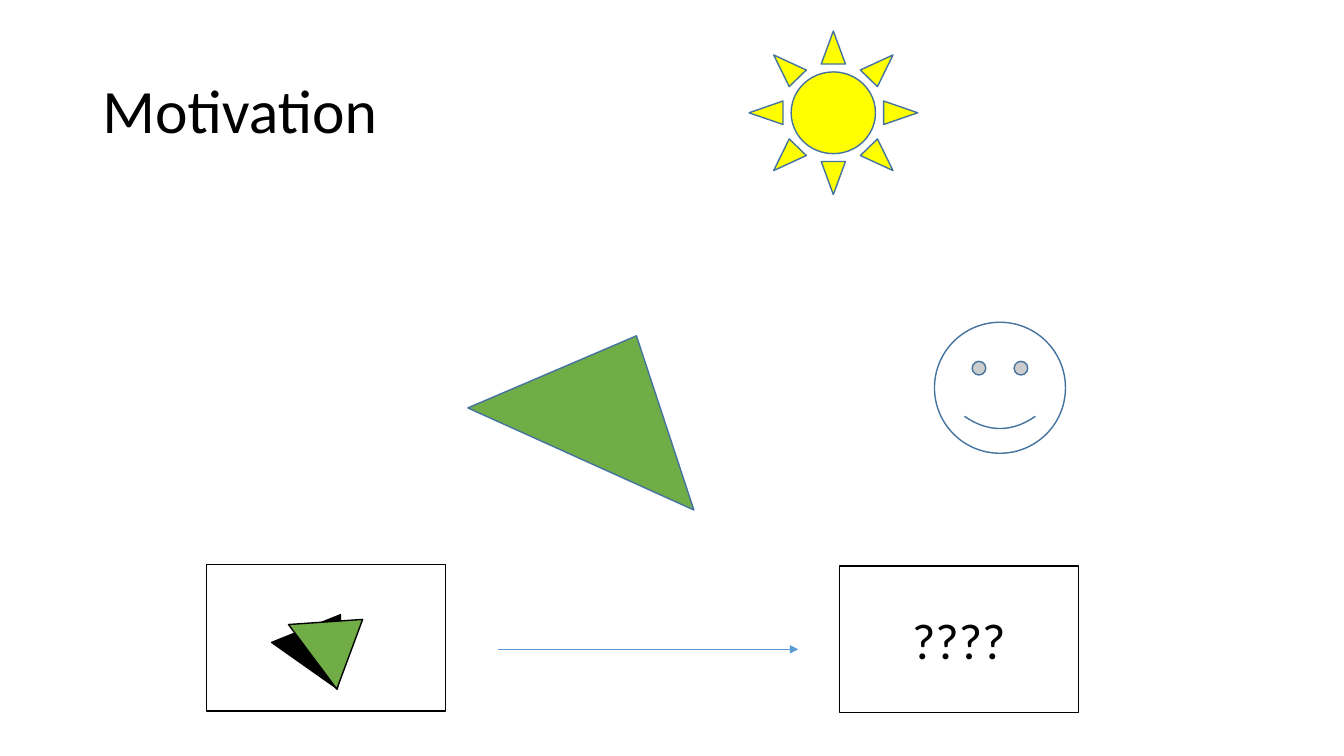
"""Build the Motivation slide: a lit scene above a framed view and an open question."""
from lxml import etree
from pptx import Presentation
from pptx.dml.color import RGBColor
from pptx.enum.shapes import MSO_CONNECTOR, MSO_SHAPE
from pptx.enum.text import MSO_ANCHOR, MSO_AUTO_SIZE, PP_ALIGN
from pptx.oxml.ns import qn
from pptx.util import Pt

RECT, TRI = MSO_SHAPE.RECTANGLE, MSO_SHAPE.ISOSCELES_TRIANGLE
SUN, FACE = MSO_SHAPE.SUN, MSO_SHAPE.SMILEY_FACE
STRAIGHT = MSO_CONNECTOR.STRAIGHT
MIDDLE, NO_FIT = MSO_ANCHOR.MIDDLE, MSO_AUTO_SIZE.NONE
LEFT, CENTER = PP_ALIGN.LEFT, PP_ALIGN.CENTER

FONT = "Calibri"
BLACK, WHITE, GREEN, YELLOW = "000000", "FFFFFF", "70AD47", "FFFF00"
EDGE, BLUE = "43739E", "5B9BD5"

TITLE = ("Motivation", 44, (66, 28.8, 828, 104.4))
SCENE = [
    (FACE, (667.5, 230.2, 93.6, 93.6), 0, WHITE, EDGE),
    (TRI, (346.2, 235.6, 177.1, 96.5), 24.3, GREEN, EDGE),
    (SUN, (535, 22.2, 120.5, 116.8), 0, YELLOW, EDGE),
]
VIEW = [
    (RECT, (147.5, 403.4, 170.8, 104.6), 0, None, BLACK),
    (TRI, (201.6, 435, 57.6, 44.6), 35.2, BLACK, BLACK),
    (TRI, (212.4, 433.5, 57.6, 44.6), 53.2, GREEN, BLACK),
]
ARROW = (355.4, 463.8, 570.2, 463.8)
ASK = (RECT, (599.5, 404.3, 170.8, 104.6), 0, None, BLACK)
ASK_TEXT = ("????", 36)


def color(code):
    """Turn a hex string into a colour."""
    return RGBColor.from_string(code)


def draw(shapes, kind, box, turn, fill, edge):
    """Add one outlined preset shape."""
    shape = shapes.add_shape(kind, *map(Pt, box))
    shape.shadow.inherit = False
    shape.rotation = turn
    if fill:
        shape.fill.solid()
        shape.fill.fore_color.rgb = color(fill)
    else:
        shape.fill.background()
    shape.line.color.rgb = color(edge)
    shape.line.width = Pt(1)
    return shape


def write(shape, text, size, align):
    """Set one line of black text, centred in height."""
    frame = shape.text_frame
    frame.word_wrap = True
    frame.auto_size = NO_FIT
    frame.vertical_anchor = MIDDLE
    para = frame.paragraphs[0]
    para.alignment = align
    run = para.add_run()
    run.text = text
    run.font.name = FONT
    run.font.size = Pt(size)
    run.font.color.rgb = color(BLACK)
    return para


def link(shapes, ends):
    """Add a thin arrow."""
    line = shapes.add_connector(STRAIGHT, *map(Pt, ends))
    line.line.color.rgb = color(BLUE)
    line.line.width = Pt(0.5)
    etree.SubElement(line.line._get_or_add_ln(), qn("a:tailEnd"), type="triangle")
    etree.SubElement(line._element.spPr, qn("a:effectLst"))


def main():
    """Compose and save the slide."""
    deck = Presentation()
    deck.slide_width, deck.slide_height = Pt(960), Pt(540)
    slide = deck.slides.add_slide(deck.slide_layouts[5])
    shapes = slide.shapes

    text, size, box = TITLE
    head = shapes.title
    head.left, head.top, head.width, head.height = map(Pt, box)
    write(head, text, size, LEFT).line_spacing = 0.9

    for item in SCENE:
        draw(shapes, *item)
    view = shapes.add_group_shape()
    for item in VIEW:
        draw(view.shapes, *item)
    link(shapes, ARROW)
    write(draw(shapes, *ASK), *ASK_TEXT, CENTER)
    deck.save("out.pptx")


if __name__ == "__main__":
    main()
